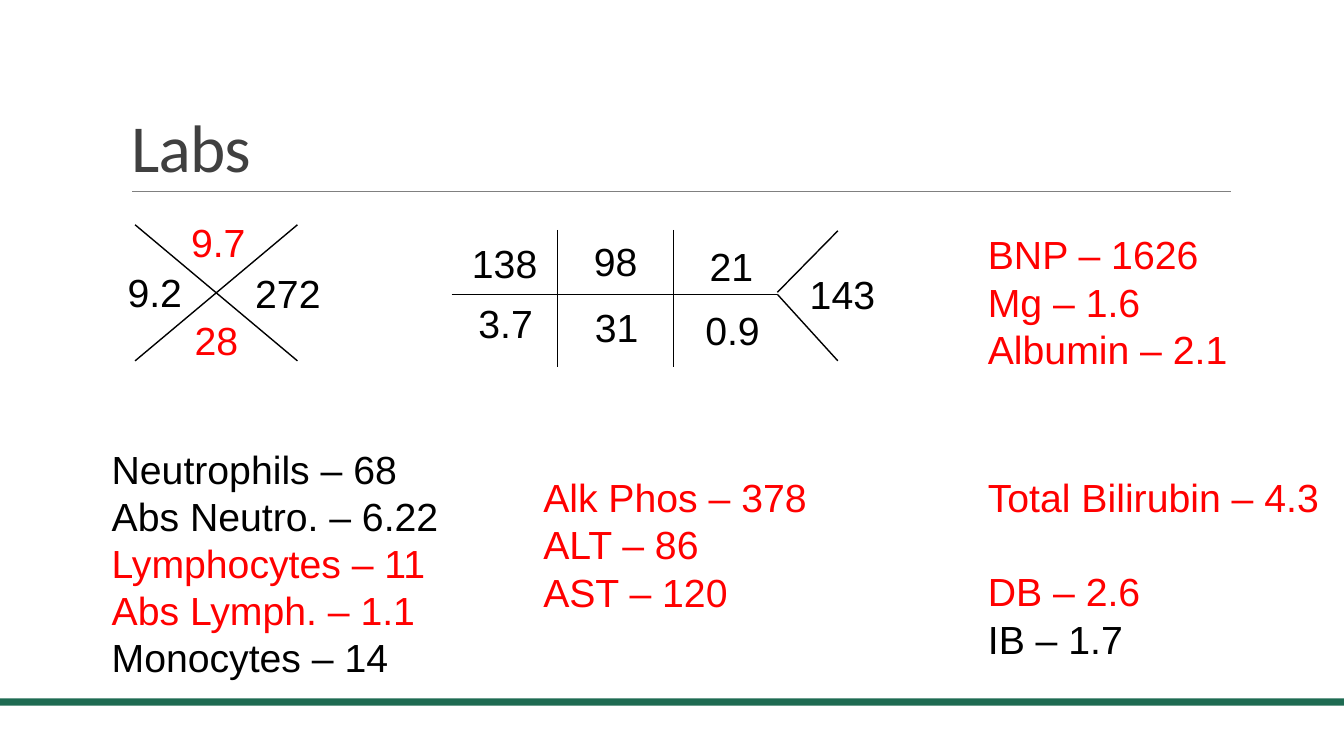
from pptx import Presentation
from pptx.dml.color import RGBColor
from pptx.enum.shapes import MSO_CONNECTOR, MSO_SHAPE
from pptx.enum.text import MSO_ANCHOR, MSO_AUTO_SIZE, PP_ALIGN
from pptx.oxml.ns import qn
from pptx.util import Pt
from lxml import etree

PX = 9144
STRAIGHT = MSO_CONNECTOR.STRAIGHT
RECTANGLE = MSO_SHAPE.RECTANGLE
BOTTOM = MSO_ANCHOR.BOTTOM
NO_AUTOFIT = MSO_AUTO_SIZE.NONE
LEFT, CENTER = PP_ALIGN.LEFT, PP_ALIGN.CENTER

BLACK = RGBColor(0x00, 0x00, 0x00)
RED = RGBColor(0xFF, 0x00, 0x00)
GREEN = RGBColor(0x1E, 0x6B, 0x52)
GRAY = RGBColor(0x80, 0x80, 0x80)
DARK_GRAY = RGBColor(0x40, 0x40, 0x40)

SLIDE_WIDTH, SLIDE_HEIGHT = 1333, 750
VALUE_HEIGHT = 57
LINE_GAP = 33.6


def px(*lengths):
    return [length * PX for length in lengths]


def add_line(slide, x1, y1, x2, y2, color=BLACK, width=1):
    line = slide.shapes.add_connector(STRAIGHT, *px(x1, y1, x2, y2))
    line.line.color.rgb = color
    line.line.width = Pt(width)
    etree.SubElement(line._element.spPr, qn("a:effectLst"))


def add_run(paragraph, text, font, size, color):
    run = paragraph.add_run()
    run.text = text
    run.font.name = font
    run.font.size = Pt(size)
    run.font.color.rgb = color
    return run


def add_text(slide, box, rows, alignment=LEFT):
    frame = slide.shapes.add_textbox(*px(*box)).text_frame
    frame.word_wrap = True
    for index, (text, color, gap) in enumerate(rows):
        paragraph = frame.paragraphs[0] if index == 0 else frame.add_paragraph()
        paragraph.alignment = alignment
        if gap:
            paragraph.space_before = Pt(gap)
        add_run(paragraph, text, "Arial", 28, color)


def add_values(slide, left, top, values):
    for text, x, y, width, color in values:
        box = (left + x, top + y, width, VALUE_HEIGHT)
        add_text(slide, box, [(text, color, 0)], CENTER)


def add_header(slide, left, top, width, height):
    title = slide.shapes.title
    title.left, title.top, title.width, title.height = px(left, top, width, height)
    frame = title.text_frame
    frame.auto_size = NO_AUTOFIT
    frame.vertical_anchor = BOTTOM
    paragraph = frame.paragraphs[0]
    paragraph.alignment = LEFT
    paragraph.line_spacing = 0.85
    run = add_run(paragraph, "Labs", "Calibri", 48, DARK_GRAY)
    run.font._element.set("spc", "-50")
    bottom = top + height
    add_line(slide, left + 11, bottom, left + width + 1, bottom, GRAY, 0.5)


def add_footer_bar(slide, left, top, width, height):
    bar = slide.shapes.add_shape(RECTANGLE, *px(left, top, width, height))
    bar.shadow.inherit = False
    bar.fill.solid()
    bar.fill.fore_color.rgb = GREEN
    bar.line.fill.background()


def add_blood_count(slide, left, top, width, height):
    right, bottom = left + width, top + height
    add_line(slide, left, top, right, bottom)
    add_line(slide, left, bottom, right, top)
    add_values(slide, left, top, [
        ("9.7", 43, -11, 79, RED),
        ("28", 41, 86, 79, RED),
        ("9.2", -20, 38, 79, BLACK),
        ("272", 102, 39, 99, BLACK),
    ])


def add_metabolic_panel(slide, left, top, width, height):
    middle, fork, right = top + 64, left + 323, left + width
    add_line(slide, left, middle, fork, middle)
    for divider in (left + 105, left + 220):
        add_line(slide, divider, top, divider, top + height)
    add_line(slide, right, top + 1, fork, middle - 2)
    add_line(slide, right, top + 130, fork, middle)
    add_values(slide, left, top, [
        (text, x, y, 99, BLACK) for text, x, y in [
            ("138", 3, 5), ("98", 113, 3), ("21", 228, 7),
            ("3.7", 4, 64), ("31", 114, 68), ("0.9", 229, 71),
            ("143", 338, 35),
        ]
    ])


def main():
    presentation = Presentation()
    presentation.slide_width, presentation.slide_height = px(SLIDE_WIDTH, SLIDE_HEIGHT)
    slide = presentation.slides.add_slide(presentation.slide_layouts[5])

    add_footer_bar(slide, 0, 693, SLIDE_WIDTH, 7)
    add_header(slide, 120, 31, 1100, 159)
    add_blood_count(slide, 134, 223, 161, 135)
    add_metabolic_panel(slide, 448, 228, 383, 136)
    add_text(slide, (529, 465, 296, 151), [
        ("Alk Phos – 378", RED, 0),
        ("ALT – 86", RED, 0),
        ("AST – 120", RED, 0),
    ])
    add_text(slide, (970, 224, 296, 151), [
        ("BNP – 1626", RED, 0),
        ("Mg – 1.6", RED, 0),
        ("Albumin – 2.1", RED, 0),
    ])
    add_text(slide, (970, 465, 360, 151), [
        ("Total Bilirubin – 4.3", RED, 0),
        ("DB – 2.6", RED, LINE_GAP),
        ("IB – 1.7", BLACK, 0),
    ])
    add_text(slide, (101, 437, 346, 246), [
        ("Neutrophils – 68", BLACK, 0),
        ("Abs Neutro. – 6.22", BLACK, 0),
        ("Lymphocytes – 11", RED, 0),
        ("Abs Lymph. – 1.1", RED, 0),
        ("Monocytes – 14", BLACK, 0),
    ])
    presentation.save("out.pptx")


if __name__ == "__main__":
    main()
